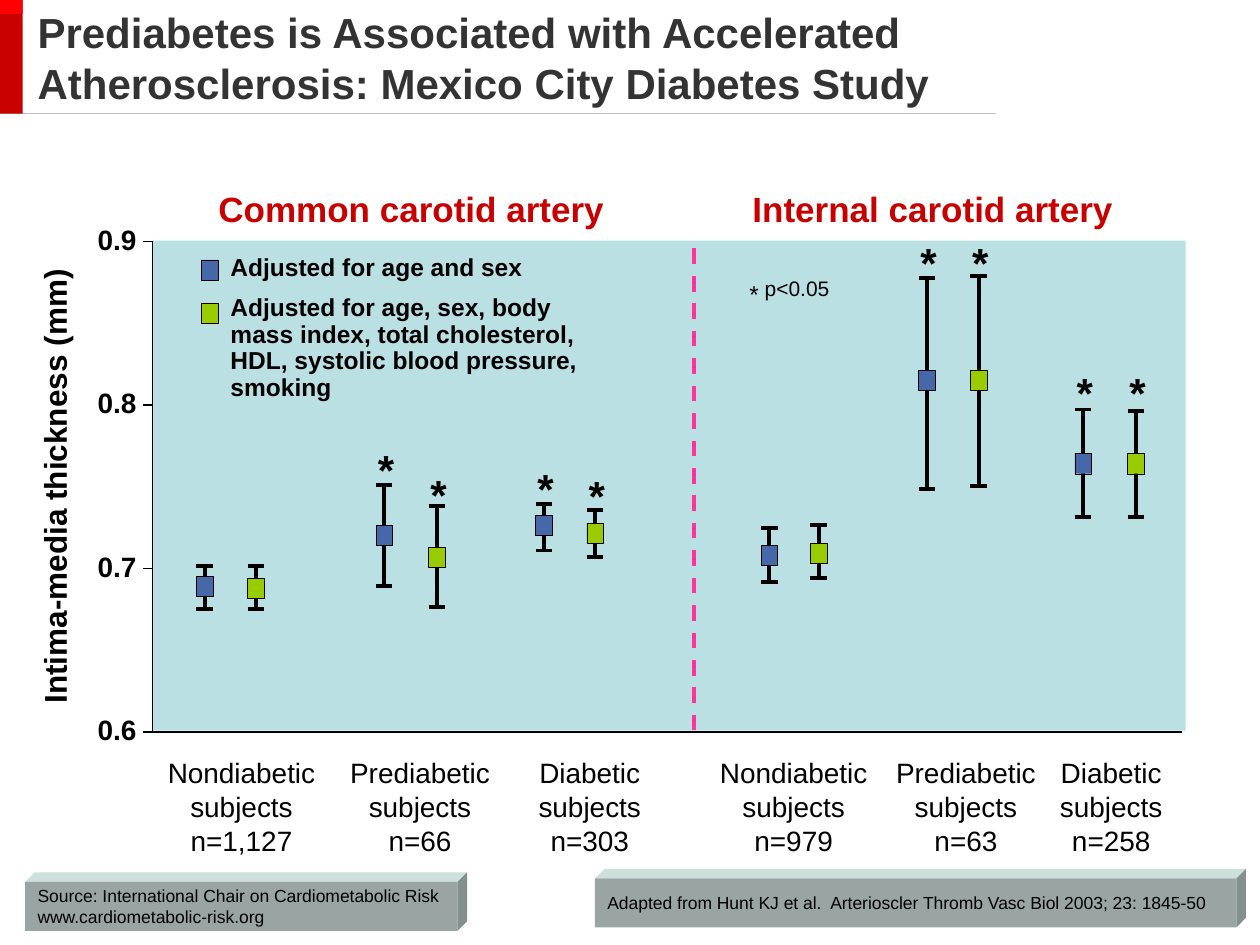
from lxml.etree import SubElement
from pptx import Presentation
from pptx.dml.color import RGBColor
from pptx.enum.dml import MSO_LINE
from pptx.enum.shapes import MSO_CONNECTOR, MSO_SHAPE
from pptx.enum.text import MSO_ANCHOR as ANCHOR, PP_ALIGN as ALIGN
from pptx.oxml.ns import qn
from pptx.util import Pt

COLORS = {
    "black": "000000", "title": "333333", "red": "C80000", "bright_red": "FE0000",
    "rule": "C0C0C0", "plot": "BBE0E3", "divider": "FF3399",
    "blue": "4667A8", "green": "99CC00",
    "box_front": "9AA5A3", "box_top": "CDE0DC", "box_side": "84908E",
}

# Content
TITLE = "Prediabetes is Associated with Accelerated Atherosclerosis: Mexico City Diabetes Study"
AXIS_TITLE = "Intima-media thickness (mm)"
AXIS_LABELS = ["0.9", "0.8", "0.7", "0.6"]
LEGEND = [
    "Adjusted for age and sex",
    "Adjusted for age, sex, body mass index, total cholesterol, HDL, "
    "systolic blood pressure, smoking",
]
LEGEND_MARKERS = [("blue", 148.5), ("green", 173.5)]
PANELS = [("Common carotid artery", 235), ("Internal carotid artery", 533)]
# Group name, size, centre of its label
GROUPS = [
    ("Nondiabetic", "n=1,127", 138), ("Prediabetic", "n=66", 240), ("Diabetic", "n=303", 337),
    ("Nondiabetic", "n=979", 453.5), ("Prediabetic", "n=63", 552), ("Diabetic", "n=258", 635),
]
LABEL_WIDTHS = {"Nondiabetic": 101, "Prediabetic": 97, "Diabetic": 75}
# Colour, x, upper end, lower end, marker centre, top of the star's box
ERROR_BARS = [
    ("blue", 117, 323.3, 347.8, 335, None), ("green", 146.2, 323.3, 347.8, 336.2, None),
    ("blue", 219.6, 277.2, 334.8, 306, 249.8), ("green", 249.6, 289.4, 347, 318.2, 264.2),
    ("blue", 310.8, 288, 314.6, 300.2, 260.6), ("green", 340, 291.6, 318.2, 304.6, 265),
    ("blue", 439.7, 301.7, 332.6, 317.5, None), ("green", 467.8, 300.2, 330.5, 316.1, None),
    ("blue", 529.6, 159.1, 279.4, 217.4, 131.8), ("green", 559.2, 157.7, 277.9, 217.2, 131.8),
    ("blue", 618.9, 234, 295.2, 265, 206), ("green", 649, 234.7, 295.2, 265, 206),
]
# Source boxes: left, top, width, text
SOURCES = [
    (14.4, 504, 247, ["Source: International Chair on Cardiometabolic Risk",
                      "www.cardiometabolic-risk.org"]),
    (340, 502, 366.5,
     ["Adapted from Hunt KJ et al.  Arterioscler Thromb Vasc Biol 2003; 23: 1845-50"]),
]

# Geometry
AXIS_X, AXIS_TOP, AXIS_BOTTOM, AXIS_RIGHT = 87.2, 138, 418.3, 675.4
CAP, MARKER_W, MARKER_H = 9.4, 9.4, 11.5
SOURCE_H, DEPTH = 28, 5.5

presentation = Presentation()
presentation.slide_width, presentation.slide_height = Pt(720), Pt(540)
slide = presentation.slides.add_slide(presentation.slide_layouts[6])
shapes = slide.shapes


def rgb(name):
    return RGBColor.from_string(COLORS[name])


def paint(shape, fill=None, line=None, width=0.25):
    shape.shadow.inherit = False
    if fill:
        shape.fill.solid()
        shape.fill.fore_color.rgb = rgb(fill)
    else:
        shape.fill.background()
    if line:
        shape.line.color.rgb = rgb(line)
        shape.line.width = Pt(width)
    else:
        shape.line.fill.background()
    return shape


def add_rect(left, top, width, height, fill, line=None):
    shape = shapes.add_shape(MSO_SHAPE.RECTANGLE, Pt(left), Pt(top), Pt(width), Pt(height))
    return paint(shape, fill, line)


def add_polygon(points, close=True, **style):
    points = [(Pt(x), Pt(y)) for x, y in points]
    builder = shapes.build_freeform(*points[0])
    builder.add_line_segments(points[1:], close=close)
    return paint(builder.convert_to_shape(), **style)


def add_line(x1, y1, x2, y2, color="black", width=2.25):
    line = shapes.add_connector(MSO_CONNECTOR.STRAIGHT, Pt(x1), Pt(y1), Pt(x2), Pt(y2))
    line.line.color.rgb = rgb(color)
    line.line.width = Pt(width)
    SubElement(line._element.spPr, qn("a:effectLst"))
    return line


def write(shape, paragraphs, size, color="black", bold=False, align=ALIGN.LEFT,
          anchor=ANCHOR.TOP, wrap=False, spacing=None, gap=0):
    frame = shape.text_frame
    frame.word_wrap = wrap
    frame.vertical_anchor = anchor
    for index, text in enumerate(paragraphs):
        paragraph = frame.add_paragraph() if index else frame.paragraphs[0]
        paragraph.text = text
        paragraph.alignment = align
        if spacing:
            paragraph.line_spacing = spacing
        if index and gap:
            paragraph.space_before = Pt(gap)
        for run in paragraph.runs:
            run.font.name = "Arial"
            run.font.size = Pt(size)
            run.font.bold = bold
            run.font.color.rgb = rgb(color)
    return shape


def add_text(left, top, width, height, paragraphs, size, **style):
    box = shapes.add_textbox(Pt(left), Pt(top), Pt(width), Pt(height))
    return write(box, paragraphs, size, **style)


def add_marker(center_x, center_y, color):
    add_rect(center_x - MARKER_W / 2, center_y - MARKER_H / 2, MARKER_W, MARKER_H,
             color, line="black")


# Title with its red bar and rule
add_line(0, 65, 569, 65, "rule", 0.75)
add_rect(0, 0, 13, 65, "red")
add_rect(0, 0, 13, 8, "bright_red")
add_text(14.4, 0, 652.3, 65.5, [TITLE], 24, color="title", bold=True,
         anchor=ANCHOR.MIDDLE, wrap=True)

# Plot area, axes and panel divider
add_rect(AXIS_X, 137.5, 590.4, 280, "plot")
add_polygon([(AXIS_X, AXIS_TOP), (AXIS_X, AXIS_BOTTOM), (AXIS_RIGHT, AXIS_BOTTOM)],
            close=False, line="black", width=0.75)
add_line(396.7, 142, 396.7, AXIS_BOTTOM, "divider").line.dash_style = MSO_LINE.DASH
step = (AXIS_BOTTOM - AXIS_TOP) / (len(AXIS_LABELS) - 1)
for index, label in enumerate(AXIS_LABELS):
    y = AXIS_TOP + index * step
    add_line(AXIS_X - 5.5, y, AXIS_X, y, width=0.75)
    add_text(48.4, y - 14.5, 36.7, 26.6, [label], 16, bold=True, align=ALIGN.RIGHT)
axis_title = add_text(-101.5, 265, 265, 28.8, [AXIS_TITLE], 18, bold=True, align=ALIGN.RIGHT)
axis_title.rotation = 270

# Panel headings and group labels
for heading, center in PANELS:
    add_text(center - 118, 103.7, 236, 31.7, [heading], 20, color="red", bold=True,
             align=ALIGN.CENTER)
for name, count, center in GROUPS:
    width = LABEL_WIDTHS[name]
    add_text(center - width / 2, 428.4, width, 65, [name + "\nsubjects", count], 16,
             align=ALIGN.CENTER)

# Error bars with markers and significance stars
for color, x, upper, lower, middle, star_top in ERROR_BARS:
    add_line(x, upper, x, lower)
    for y in (upper, lower):
        add_line(x - CAP / 2, y, x + CAP / 2, y)
    add_marker(x, middle, color)
    if star_top is not None:
        add_text(x - 11, star_top, 24, 36, ["*"], 24, bold=True, align=ALIGN.CENTER)

# Legend and significance note
add_text(124.6, 142.6, 217.4, 92, LEGEND, 14, bold=True, wrap=True, spacing=0.9, gap=7.7)
for color, top in LEGEND_MARKERS:
    add_marker(119.9, top + MARKER_H / 2, color)
note = add_text(399.6, 141.8, 103, 26.6, ["*"], 24, align=ALIGN.CENTER, wrap=True)
paragraph = note.text_frame.paragraphs[0]
paragraph.runs[0]._r.get_or_add_rPr().set("baseline", "-16000")
run = paragraph.add_run()
run.text = " p<0.05"
run.font.name, run.font.size = "Arial", Pt(12)
run.font.color.rgb = rgb("black")

# Raised source boxes
for left, top, width, lines in SOURCES:
    right, bottom = left + width, top + SOURCE_H
    back_top, back_right = top - DEPTH, right + DEPTH
    add_polygon([(left, top), (left + DEPTH, back_top), (back_right, back_top), (right, top)],
                fill="box_top")
    add_polygon([(right, top), (back_right, back_top), (back_right, bottom - DEPTH),
                 (right, bottom)], fill="box_side")
    write(add_rect(left, top, width, SOURCE_H, "box_front"), lines, 10, anchor=ANCHOR.MIDDLE)

presentation.save("out.pptx")
